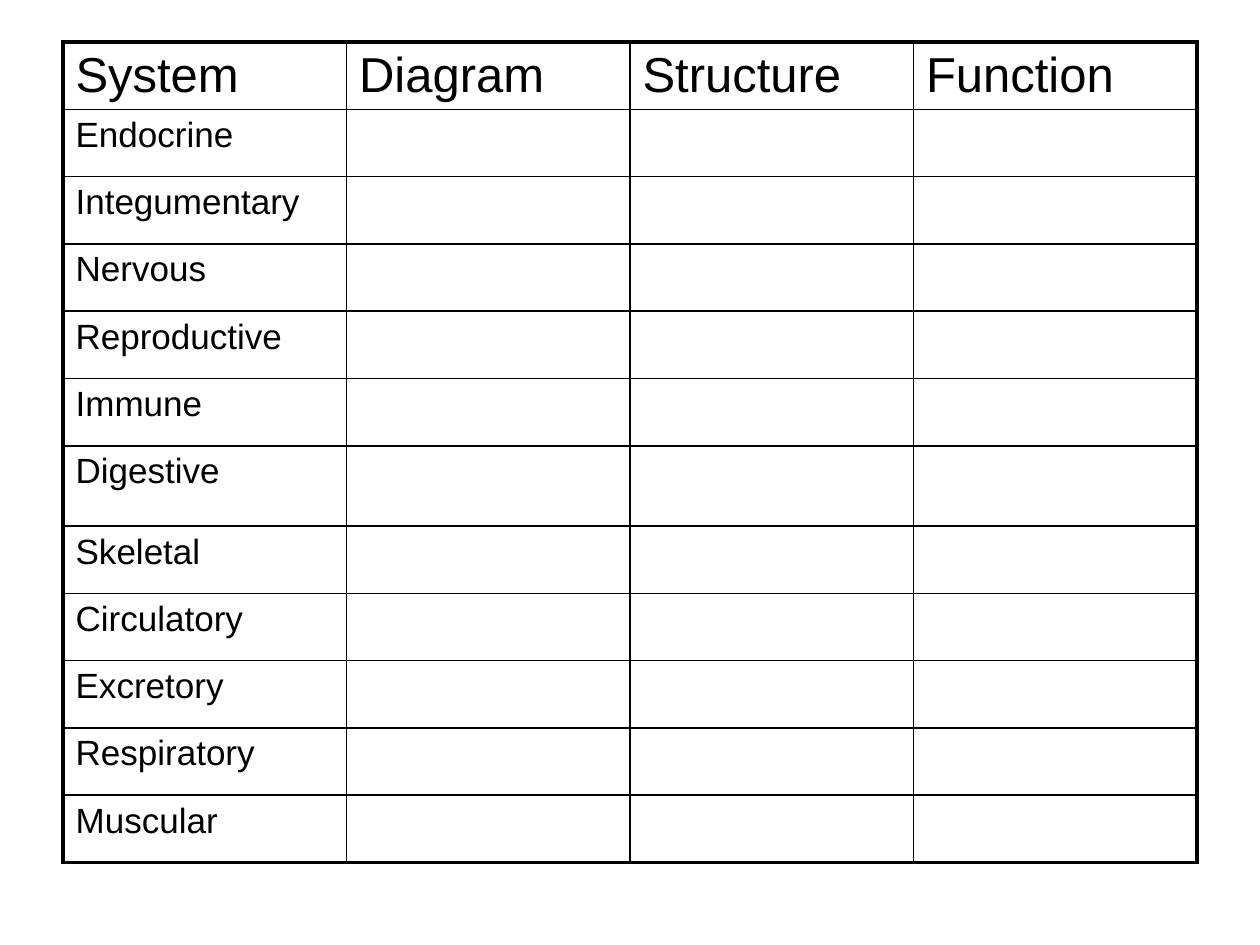
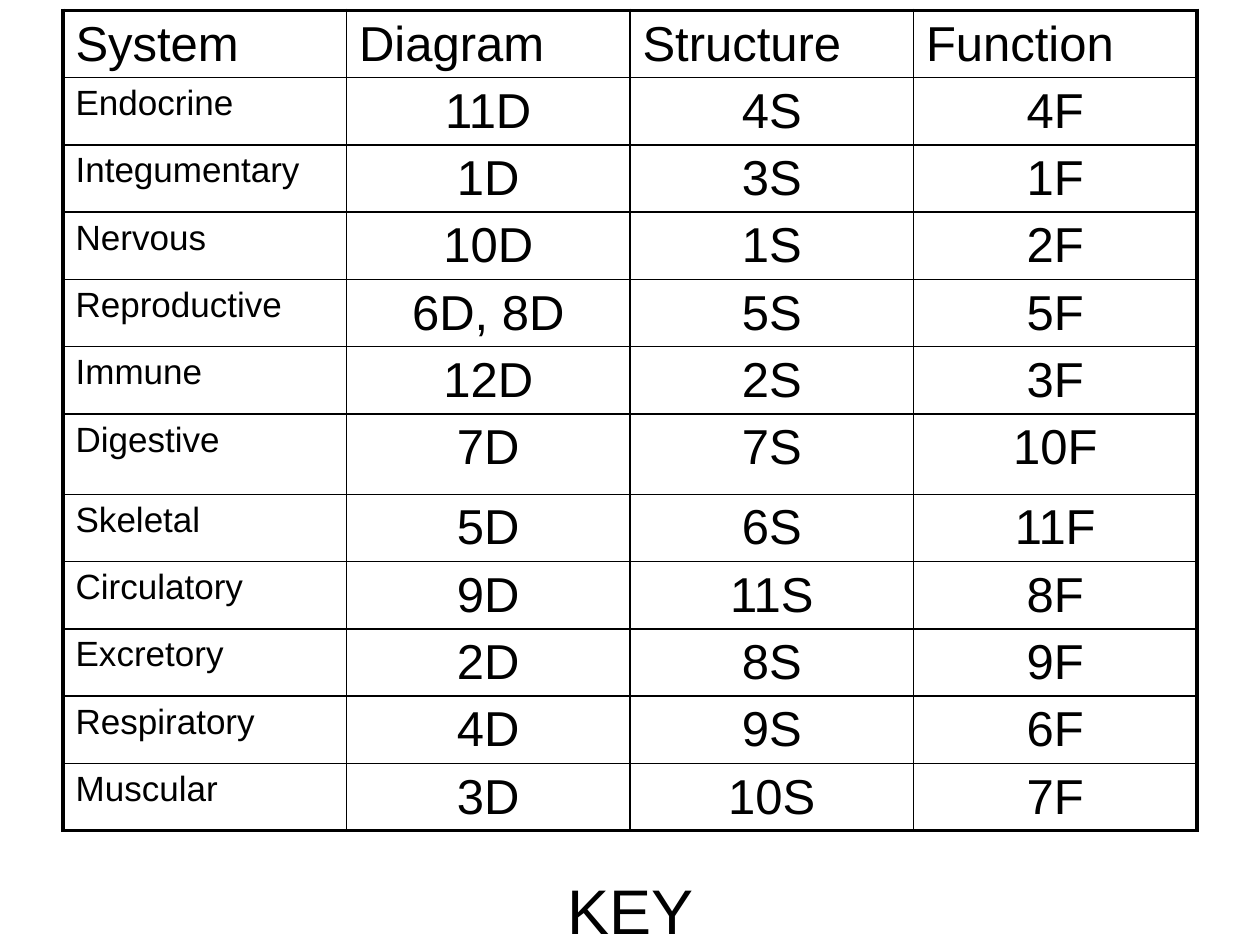
from dataclasses import dataclass

from lxml import etree
from pptx import Presentation
from pptx.dml.color import RGBColor
from pptx.enum.text import PP_ALIGN
from pptx.oxml.ns import qn
from pptx.util import Cm, Pt

LEFT, CENTER = PP_ALIGN.LEFT, PP_ALIGN.CENTER


@dataclass(frozen=True)
class Theme:
    font: str = "Arial"
    ink: str = "000000"
    paper: str = "FFFFFF"
    large: int = 28
    small: int = 20
    title: int = 36
    thin: float = 1
    thick: float = 2.25


THEME = Theme()
HEADS = ["System", "Diagram", "Structure", "Function"]
KEY = {
    "Endocrine": ["11D", "4S", "4F"],
    "Integumentary": ["1D", "3S", "1F"],
    "Nervous": ["10D", "1S", "2F"],
    "Reproductive": ["6D, 8D", "5S", "5F"],
    "Immune": ["12D", "2S", "3F"],
    "Digestive": ["7D", "7S", "10F"],
    "Skeletal": ["5D", "6S", "11F"],
    "Circulatory": ["9D", "11S", "8F"],
    "Excretory": ["2D", "8S", "9F"],
    "Respiratory": ["4D", "9S", "6F"],
    "Muscular": ["3D", "10S", "7F"],
}
ROW = Cm(1.35)
TALL = {"Digestive": Cm(1.62)}
LEFT_EDGE, WIDTH = Cm(1.27), Cm(22.86)


def add_slide(deck):
    slide = deck.slides.add_slide(deck.slide_layouts[6])
    fill = slide.background.fill
    fill.solid()
    fill.fore_color.rgb = RGBColor.from_string(THEME.paper)
    return slide


def write(frame, text, size, align):
    para = frame.paragraphs[0]
    para.text = text
    para.alignment = align
    para.font.name = THEME.font
    para.font.size = Pt(size)
    para.font.color.rgb = RGBColor.from_string(THEME.ink)


def add_edge(cell, side, width):
    """Draw one cell border; side is L, R, T or B."""
    props = cell._tc.get_or_add_tcPr()
    line = etree.SubElement(props, qn(f"a:ln{side}"), w=str(Pt(width)))
    fill = etree.SubElement(line, qn("a:solidFill"))
    etree.SubElement(fill, qn("a:srgbClr"), val=THEME.ink)


def add_grid(slide, top, rows):
    """Add a table with a thick frame and thin inner lines."""
    heights = [TALL.get(row[0], ROW) for row in rows]
    last_row, last_col = len(rows) - 1, len(HEADS) - 1
    table = slide.shapes.add_table(
        len(rows), len(HEADS), LEFT_EDGE, top, WIDTH, sum(heights)
    ).table
    table.first_row = table.horz_banding = False
    for col in table.columns:
        col.width = WIDTH // len(HEADS)
    for r, row in enumerate(rows):
        table.rows[r].height = heights[r]
        for c, text in enumerate(row):
            cell = table.cell(r, c)
            size = THEME.small if r and c == 0 else THEME.large
            write(cell.text_frame, text, size, CENTER if r and c else LEFT)
            outer = {"L": c == 0, "R": c == last_col,
                     "T": r == 0, "B": r == last_row}
            for side, thick in outer.items():
                add_edge(cell, side, THEME.thick if thick else THEME.thin)
            cell.fill.background()


def add_label(slide, text, left, top, width, height):
    frame = slide.shapes.add_textbox(left, top, width, height).text_frame
    frame.word_wrap = True
    write(frame, text, THEME.title, CENTER)


def main():
    deck = Presentation()
    deck.slide_width, deck.slide_height = Cm(25.4), Cm(19.05)

    blank = [[name] + [""] * len(marks) for name, marks in KEY.items()]
    add_grid(add_slide(deck), Cm(0.85), [HEADS] + blank)

    solved = [[name] + marks for name, marks in KEY.items()]
    slide = add_slide(deck)
    add_grid(slide, Cm(0.21), [HEADS] + solved)
    add_label(slide, "KEY", Cm(8.69), Cm(17.45), Cm(8.05), Cm(2.16))

    deck.save("out.pptx")


if __name__ == "__main__":
    main()
